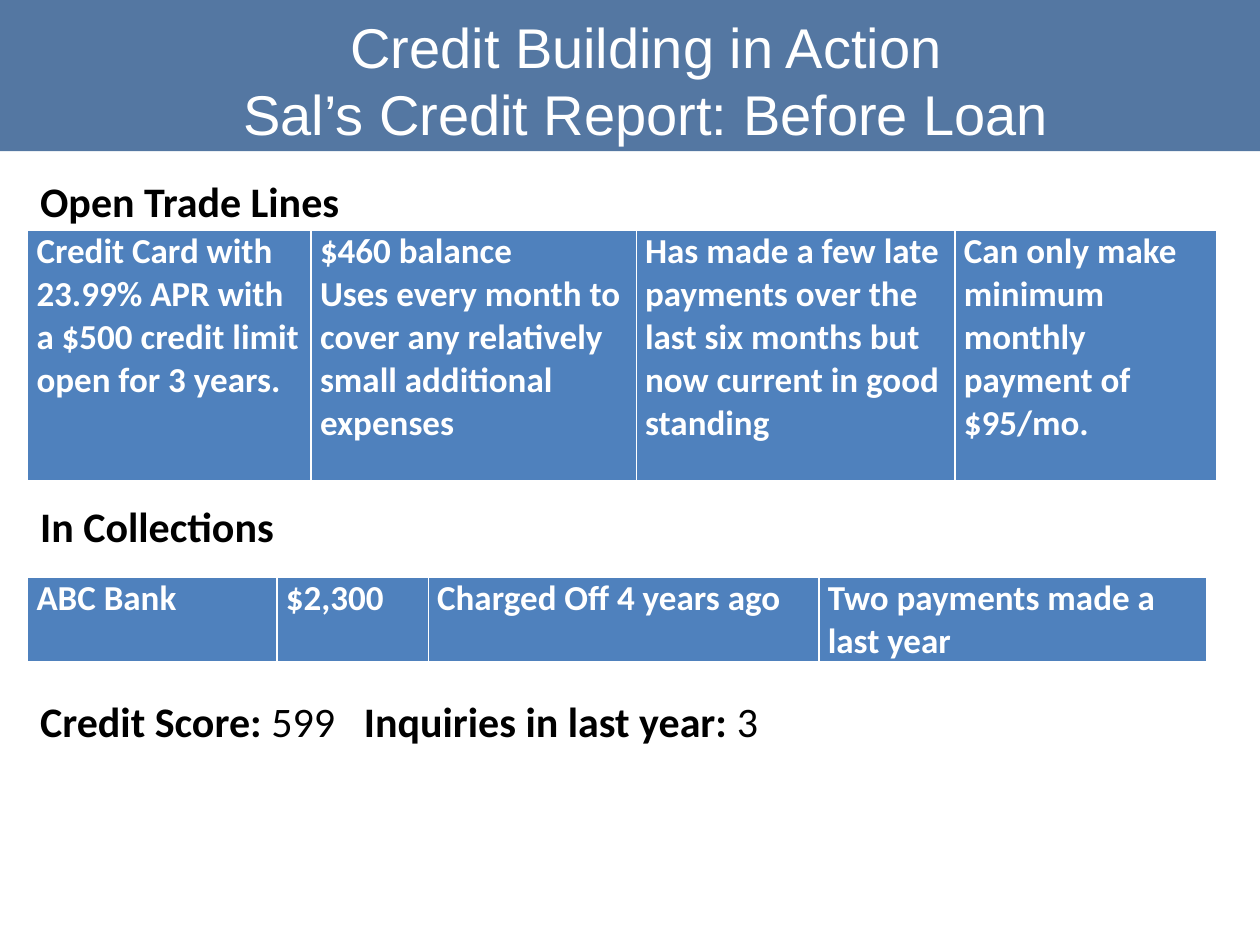
"""Build the slide on Sal's credit report before the loan."""
import pptx
import pptx.dml.color
import pptx.enum.shapes
import pptx.enum.text
import pptx.oxml.ns
import pptx.util
from lxml import etree
from pptx.util import Inches

WHITE = pptx.dml.color.RGBColor(0xFF, 0xFF, 0xFF)
BLACK = pptx.dml.color.RGBColor(0x00, 0x00, 0x00)
BAND_BLUE = pptx.dml.color.RGBColor(0x37, 0x60, 0x92)
CELL_BLUE = pptx.dml.color.RGBColor(0x4F, 0x81, 0xBD)
LEFT = Inches(0.22)
BORDERS = {"lnL": 1, "lnR": 1, "lnT": 1, "lnB": 3}


def add_element(parent, tag, **attributes):
    return etree.SubElement(parent, pptx.oxml.ns.qn(tag), **attributes)


def style_font(font, size, color, name="Calibri"):
    font.name = name
    font.size = pptx.util.Pt(size)
    font.color.rgb = color


deck = pptx.Presentation()
deck.slide_width = Inches(10)
deck.slide_height = Inches(7.5)
page = deck.slides.add_slide(deck.slide_layouts[5])

band = page.shapes.add_shape(
    pptx.enum.shapes.MSO_SHAPE.RECTANGLE, Inches(-0.01), 0, Inches(10.01), Inches(1.2))
band.shadow.inherit = False
band.fill.solid()
band.fill.fore_color.rgb = BAND_BLUE
band.line.fill.background()
band_color = band.fill._xPr.find(".//" + pptx.oxml.ns.qn("a:srgbClr"))
add_element(band_color, "a:alpha", val="85000")

title = page.shapes.title
band._element.addnext(title._element)
title.left, title.top = Inches(0.93), Inches(0.03)
title.width, title.height = Inches(8.4), Inches(1.2)
frame = title.text_frame
frame.text = "Credit Building in Action\nSal’s Credit Report: Before Loan"
frame.vertical_anchor = pptx.enum.text.MSO_ANCHOR.MIDDLE
frame.margin_left = frame.margin_right = Inches(0.12)
frame.margin_top = frame.margin_bottom = Inches(0.06)
for para in frame.paragraphs:
    para.alignment = pptx.enum.text.PP_ALIGN.CENTER
    style_font(para.font, 32, WHITE, "Arial")

tables = [
    (1.83, 2, [
        (2.25, "Credit Card with 23.99% APR with a $500 credit limit open for 3 years."),
        (2.58, "$460 balance\nUses every month to cover any relatively small additional expenses"),
        (2.53, "Has made a few late payments over the last six months but now current in good standing"),
        (2.08, "Can only make minimum monthly payment of $95/mo."),
    ]),
    (4.58, 0.65, [
        (1.98, "ABC Bank"),
        (1.2, "$2,300"),
        (3.1, "Charged Off 4 years ago"),
        (3.08, "Two payments made a last year"),
    ]),
]
for top, height, columns in tables:
    total = sum(width for width, text in columns)
    table = page.shapes.add_table(
        1, len(columns), LEFT, Inches(top), Inches(total), Inches(height)).table
    for index, (width, text) in enumerate(columns):
        table.columns[index].width = Inches(width)
        cell = table.cell(0, index)
        cell.text = text
        cell.margin_left = cell.margin_right = Inches(0.07)
        cell.margin_top = cell.margin_bottom = 0
        for side, points in BORDERS.items():
            border = add_element(
                cell._tc.get_or_add_tcPr(), "a:" + side, w=str(pptx.util.Pt(points)))
            add_element(add_element(border, "a:solidFill"), "a:srgbClr", val=str(WHITE))
        cell.fill.solid()
        cell.fill.fore_color.rgb = CELL_BLUE
        for para in cell.text_frame.paragraphs:
            style_font(para.font, 20, WHITE)
            para.font.bold = True

labels = [
    (1.34, 2.6, [("Open Trade Lines", True)]),
    (3.92, 2.08, [("In Collections", True)]),
    (5.47, 5.95, [("Credit Score:", True), (" 599\t", False),
                  ("Inquiries in last year: ", True), ("3", False)]),
]
for top, width, pieces in labels:
    box = page.shapes.add_textbox(LEFT, Inches(top), Inches(width), Inches(0.5))
    box.text_frame.word_wrap = False
    para = box.text_frame.paragraphs[0]
    if len(pieces) > 1:
        tabs = add_element(para._p.get_or_add_pPr(), "a:tabLst")
        add_element(tabs, "a:tab", pos=str(Inches(2.57)), algn="l")
    style_font(para.font, 24, BLACK)
    for text, bold in pieces:
        span = para.add_run()
        span.text = text
        span.font.bold = bold

deck.save("out.pptx")
